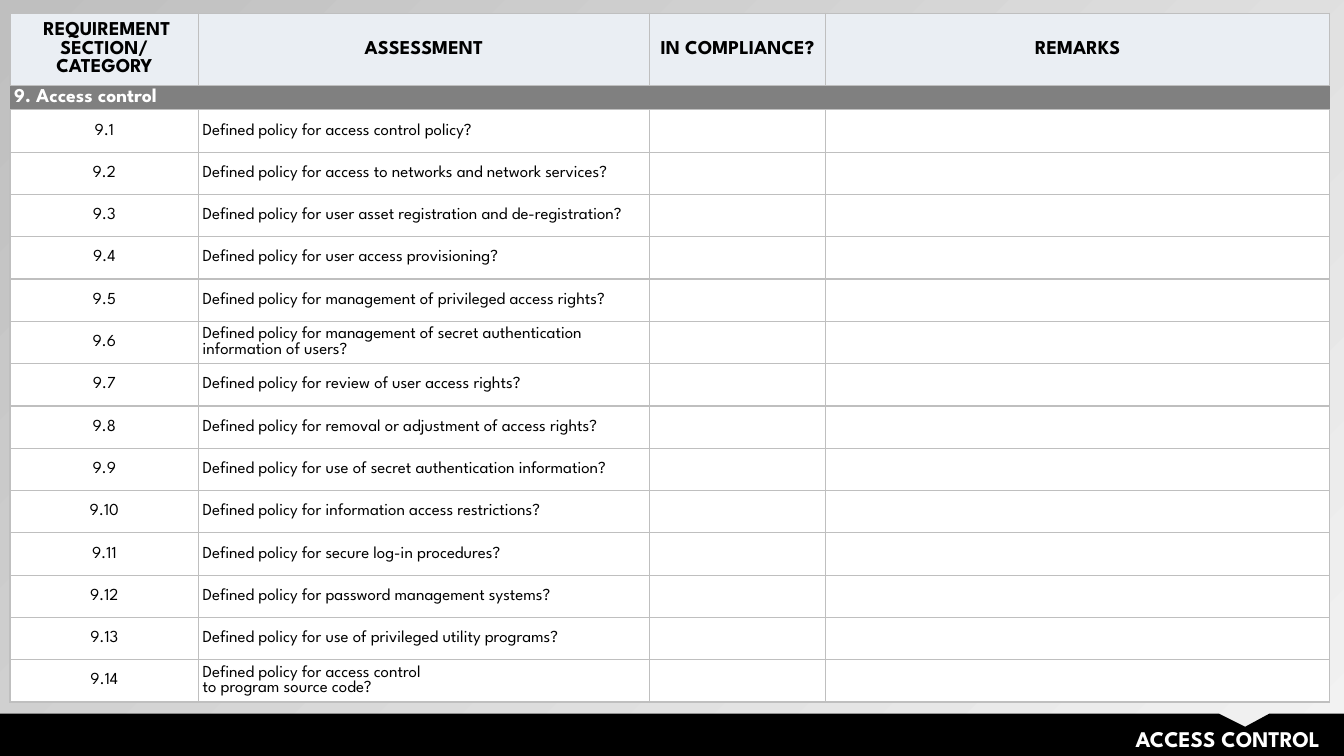
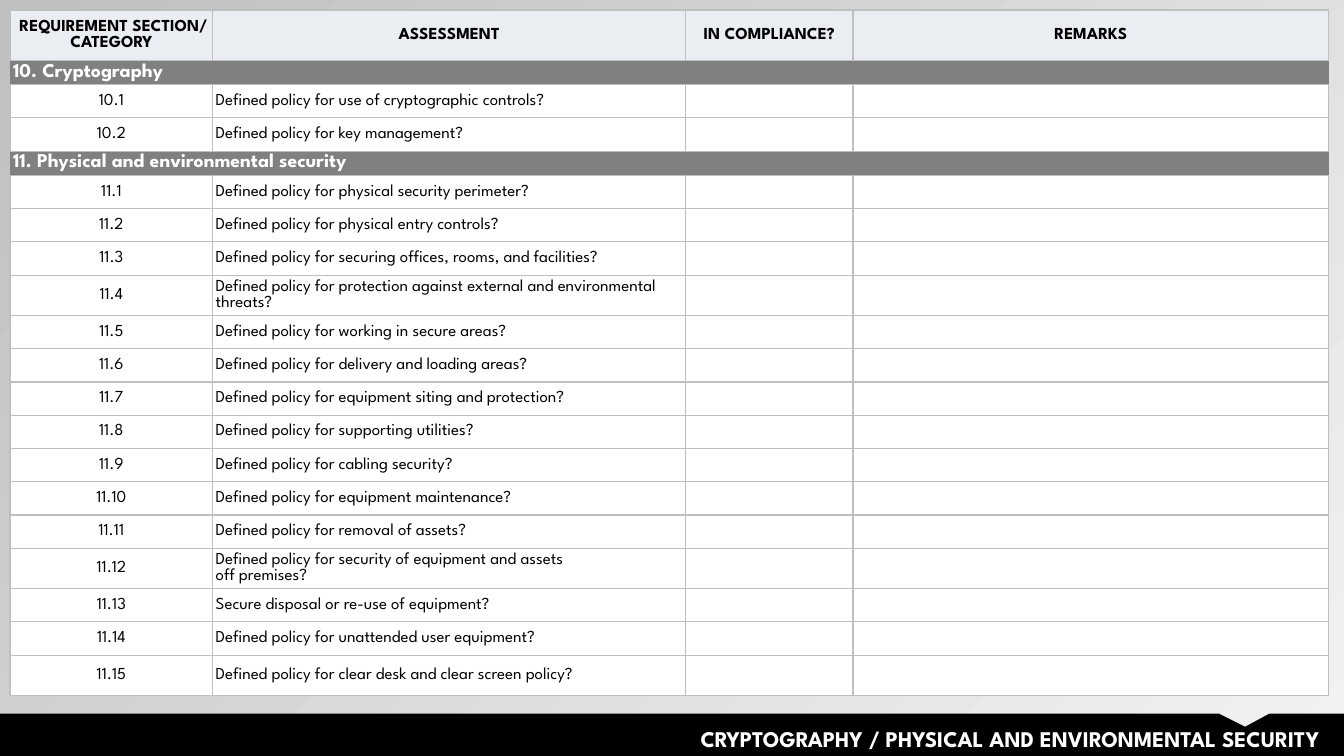
from pptx import Presentation
from pptx.dml.color import RGBColor
from pptx.enum.text import MSO_ANCHOR, PP_ALIGN
from pptx.oxml.ns import qn
from pptx.util import Inches, Pt
from lxml import etree

MIDDLE = MSO_ANCHOR.MIDDLE
LEFT, CENTER, RIGHT = PP_ALIGN.LEFT, PP_ALIGN.CENTER, PP_ALIGN.RIGHT

FONT = "League Spartan"
COLORS = {
    "black": "000000",
    "white": "FFFFFF",
    "header": "EAEEF3",
    "section": "808080",
    "grid": "BFBFBF",
    "light": "F2F2F2",
}
SLIDE_W, SLIDE_H = 13.33, 7.5
BAND_TOP = 7.08
TABLE_LEFT = 0.1
SECTION_H = 0.24
BODY_SIZE, SECTION_SIZE, TITLE_SIZE = 12, 14, 16

HEADERS = [" REQUIREMENT SECTION/\nCATEGORY", "ASSESSMENT", "IN COMPLIANCE?", "REMARKS"]

ACCESS = [
    "Defined policy for access control policy?",
    "Defined policy for access to networks and network services?",
    "Defined policy for user asset registration and de-registration?",
    "Defined policy for user access provisioning?",
    "Defined policy for management of privileged access rights?",
    "Defined policy for management of secret authentication information of users?",
    "Defined policy for review of user access rights?",
    "Defined policy for removal or adjustment of access rights?",
    "Defined policy for use of secret authentication information?",
    "Defined policy for information access restrictions?",
    "Defined policy for secure log-in procedures?",
    "Defined policy for password management systems?",
    "Defined policy for use of privileged utility programs?",
    "Defined policy for access control\nto program source code?",
]
CRYPTOGRAPHY = [
    "Defined policy for use of cryptographic controls?",
    "Defined policy for key management?",
]
PHYSICAL = [
    "Defined policy for physical security perimeter?",
    "Defined policy for physical entry controls?",
    "Defined policy for securing offices, rooms, and facilities?",
    "Defined policy for protection against external and environmental threats?",
    "Defined policy for working in secure areas?",
    "Defined policy for delivery and loading areas?",
    "Defined policy for equipment siting and protection?",
    "Defined policy for supporting utilities?",
    "Defined policy for cabling security?",
    "Defined policy for equipment maintenance?",
    "Defined policy for removal of assets?",
    "Defined policy for security of equipment and assets\noff premises?",
    "Secure disposal or re-use of equipment?",
    "Defined policy for unattended user equipment?",
    "Defined policy for clear desk and clear screen policy?",
]

CHECKLISTS = [
    {
        "title": "ACCESS CONTROL",
        "top": 0.13, "cols": [1.87, 4.47, 1.75, 5], "inset": 0.04,
        "header_h": 0.72, "header_size": 14, "row_h": 0.42,
        "tall_rows": {},
        "sections": [(9, "Access control", ACCESS)],
    },
    {
        "title": "CRYPTOGRAPHY / PHYSICAL AND ENVIRONMENTAL SECURITY",
        "top": 0.1, "cols": [2.01, 4.69, 1.66, 4.72], "inset": 0.03,
        "header_h": 0.5, "header_size": 12, "row_h": 0.33,
        "tall_rows": {"11.4": 0.4, "11.12": 0.4, "11.15": 0.4},
        "sections": [
            (10, "Cryptography", CRYPTOGRAPHY),
            (11, "Physical and environmental security", PHYSICAL),
        ],
    },
]


def rgb(name):
    return RGBColor.from_string(COLORS[name])


def add_text(tf, text, size, color, bold, align):
    """Write one paragraph per line of text."""
    for i, line in enumerate(text.split("\n")):
        p = tf.paragraphs[0] if i == 0 else tf.add_paragraph()
        p.alignment = align
        if not line:
            p._p.get_or_add_endParaRPr().set("sz", str(size * 100))
            continue
        r = p.add_run()
        r.text = line
        r.font.name = FONT
        r.font.size = Pt(size)
        r.font.bold = bold
        r.font.color.rgb = rgb(color)


def set_background(slide):
    fill = slide.background.fill
    fill.gradient()
    fill.gradient_angle = 135
    for stop, color in zip(fill.gradient_stops, ("light", "grid")):
        stop.color.rgb = rgb(color)


def add_footer(slide, title):
    """Black band with a notch, and the slide title on it."""
    outline = [(12.09, BAND_TOP), (12.35, 7.21), (12.59, BAND_TOP),
               (SLIDE_W, BAND_TOP), (SLIDE_W, SLIDE_H), (0, SLIDE_H)]
    builder = slide.shapes.build_freeform(0, Inches(BAND_TOP))
    builder.add_line_segments([(Inches(x), Inches(y)) for x, y in outline])
    sp = builder.convert_to_shape()
    sp.shadow.inherit = False
    sp.fill.solid()
    sp.fill.fore_color.rgb = rgb("black")
    sp.line.fill.background()

    box = slide.shapes.add_textbox(Inches(3.13), Inches(7.14), Inches(10.06), Inches(0.37))
    tf = box.text_frame
    tf.word_wrap = True
    add_text(tf, title, TITLE_SIZE, "white", True, RIGHT)


def set_borders(cell, sides):
    """Draw a grid line on the given sides and none on the others."""
    tc_pr = cell._tc.get_or_add_tcPr()
    for side in "LRTB":
        ln = etree.SubElement(tc_pr, qn(f"a:ln{side}"), w=str(Pt(1)))
        if side in sides:
            fill = etree.SubElement(ln, qn("a:solidFill"))
            etree.SubElement(fill, qn("a:srgbClr"), val=COLORS["grid"])
        else:
            etree.SubElement(ln, qn("a:noFill"))


def fill_row(table, row, texts, inset, fill, size, color="black", bold=False,
             aligns=(CENTER,) * 4, sides="LRTB"):
    for cell, text, align in zip(table.rows[row].cells, texts, aligns):
        set_borders(cell, sides)
        cell.fill.solid()
        cell.fill.fore_color.rgb = rgb(fill)
        cell.vertical_anchor = MIDDLE
        cell.margin_left = cell.margin_right = Inches(inset)
        cell.margin_top = cell.margin_bottom = 0
        add_text(cell.text_frame, text, size, color, bold, align)


def add_checklist(slide, top, cols, inset, header_h, header_size, row_h, tall_rows, sections):
    """Table with a header row, then each section's band and numbered questions."""
    n_rows = 1 + sum(1 + len(questions) for _, _, questions in sections)
    frame = slide.shapes.add_table(n_rows, len(cols), Inches(TABLE_LEFT), Inches(top),
                                   Inches(sum(cols)), Inches(n_rows * row_h))
    table = frame.table
    table.first_row = table.horz_banding = False
    for column, width in zip(table.columns, cols):
        column.width = Inches(width)

    fill_row(table, 0, HEADERS, inset, "header", header_size, bold=True)
    heights = [header_h]
    for number, name, questions in sections:
        row = len(heights)
        fill_row(table, row, [f"{number}. {name}", "", "", ""], inset, "section",
                 SECTION_SIZE, "white", True, (LEFT,) * 4, "TB")
        table.cell(row, 0).merge(table.cell(row, 1))
        heights.append(SECTION_H)
        for i, question in enumerate(questions, 1):
            label = f"{number}.{i}"
            fill_row(table, len(heights), [label, question, "", ""], inset, "white",
                     BODY_SIZE, aligns=(CENTER, LEFT, LEFT, LEFT))
            heights.append(tall_rows.get(label, row_h))
    for table_row, height in zip(table.rows, heights):
        table_row.height = Inches(height)


def main():
    prs = Presentation()
    prs.slide_width, prs.slide_height = Inches(SLIDE_W), Inches(SLIDE_H)
    for checklist in CHECKLISTS:
        slide = prs.slides.add_slide(prs.slide_layouts[6])
        set_background(slide)
        add_footer(slide, checklist["title"])
        add_checklist(slide, **{k: v for k, v in checklist.items() if k != "title"})
    prs.save("out.pptx")


if __name__ == "__main__":
    main()
